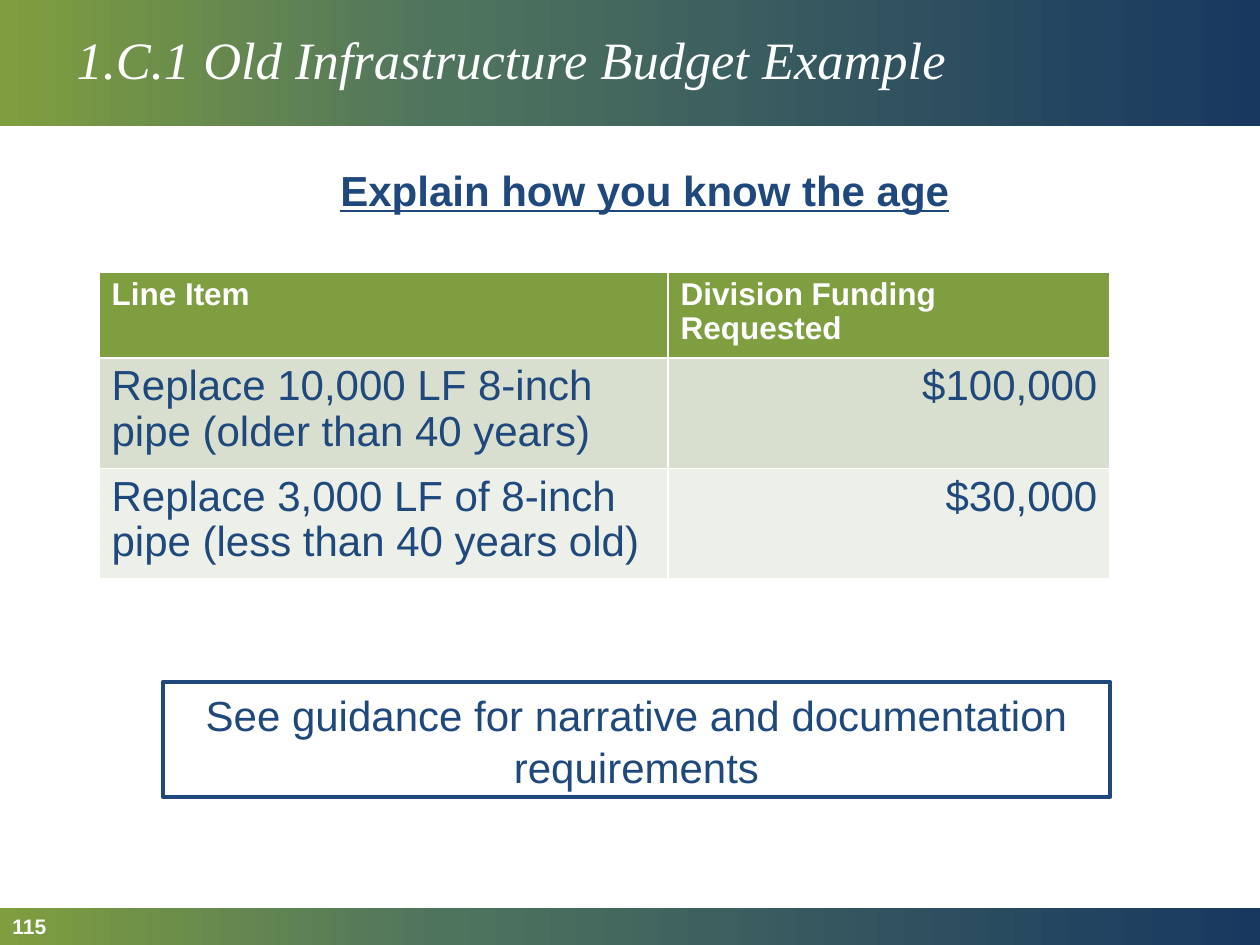
from dataclasses import dataclass

from pptx import Presentation
from pptx.dml.color import RGBColor
from pptx.enum.shapes import MSO_SHAPE as Shape
from pptx.enum.text import MSO_ANCHOR as Anchor, PP_ALIGN as Align
from pptx.oxml import parse_xml
from pptx.oxml.ns import nsdecls
from pptx.util import Emu, Pt

PX = 914400 // 126
SLIDE_SIZE = (1260, 945)


@dataclass(frozen=True)
class Theme:
    """Colours, fonts and type sizes of the slide."""
    navy: str = "1F497D"
    white: str = "FFFFFF"
    green: str = "7F9E3F"
    bands: tuple = ("D8DFCF", "ECF0E8")
    gradient: tuple = ((0, "7F9E3F"), (35, "4F745E"), (100, "183860"))
    title_font: str = "Times New Roman"
    body_font: str = "Arial"
    title_size: int = 30
    body_size: int = 24
    header_size: int = 18
    number_size: int = 12


THEME = Theme()
BODY = {"name": THEME.body_font, "size": THEME.body_size, "color": THEME.navy}
HEADING = {**BODY, "bold": True, "underline": True}
HEADER = {**BODY, "size": THEME.header_size, "color": THEME.white, "bold": True}
NUMBER = {**HEADER, "size": THEME.number_size}
TITLE = {"name": THEME.title_font, "size": THEME.title_size,
         "color": THEME.white, "italic": True}

ROWS = [
    ("Line Item", "Division Funding Requested"),
    ("Replace 10,000 LF 8-inch pipe (older than 40 years)", "$100,000"),
    ("Replace 3,000 LF of 8-inch pipe (less than 40 years old)", "$30,000"),
]


def to_emu(box):
    """Turn px lengths into EMU."""
    return [Emu(length * PX) for length in box]


def write(frame, text, style, **layout):
    """Put one formatted paragraph into a text frame."""
    frame.word_wrap = True
    paragraph = frame.paragraphs[0]
    for name, value in layout.items():
        setattr(paragraph, name, value)
    run = paragraph.add_run()
    run.text = text
    for name, value in style.items():
        if name == "color":
            run.font.color.rgb = RGBColor.from_string(value)
        else:
            setattr(run.font, name, Pt(value) if name == "size" else value)


def add_band(slide, box):
    """Draw a band with the theme gradient running left to right."""
    band = slide.shapes.add_shape(Shape.RECTANGLE, *to_emu(box))
    band.shadow.inherit = False
    band.line.fill.background()
    band.fill.gradient()
    band.fill.gradient_angle = 0
    stops = band.element.spPr.find(".//{*}gsLst")
    for stop in list(stops):
        stops.remove(stop)
    for position, color in THEME.gradient:
        stops.append(parse_xml(
            f'<a:gs {nsdecls("a")} pos="{position * 1000}">'
            f'<a:srgbClr val="{color}"/></a:gs>'))


def add_title(slide, box, text):
    """Place the title over a gradient band."""
    left, top, width, height = box
    add_band(slide, box)
    title = slide.shapes.title
    title.left, title.top, title.width, title.height = to_emu(
        (left + 64, top, width - 113, height))
    slide.shapes._spTree.append(title.element)
    title.text_frame.vertical_anchor = Anchor.MIDDLE
    write(title.text_frame, text, TITLE, alignment=Align.LEFT, line_spacing=0.9)


def add_footer(slide, box, number):
    """Place the slide number over a gradient band."""
    left, top, width, height = box
    add_band(slide, box)
    label = slide.shapes.add_textbox(*to_emu((left, top, 284, height)))
    label.text_frame.vertical_anchor = Anchor.MIDDLE
    write(label.text_frame, number, NUMBER)


def add_heading(slide, box, text):
    """Place the underlined heading."""
    heading = slide.shapes.add_textbox(*to_emu(box))
    write(heading.text_frame, text, HEADING, alignment=Align.CENTER,
          line_spacing=1.05, space_after=Pt(6))


def add_budget_table(slide, box, rows):
    """Place the budget table with a header and banded rows."""
    table = slide.shapes.add_table(len(rows), len(rows[0]), *to_emu(box)).table
    for column, width in zip(table.columns, to_emu((569, 442))):
        column.width = width
    for row, height in zip(table.rows, to_emu((83, 106, 106))):
        row.height = height
    fills = (THEME.green, *THEME.bands)
    for row_index, (texts, fill) in enumerate(zip(rows, fills)):
        for column_index, text in enumerate(texts):
            cell = table.cell(row_index, column_index)
            cell.fill.solid()
            cell.fill.fore_color.rgb = RGBColor.from_string(fill)
            is_amount = row_index > 0 and column_index == 1
            write(cell.text_frame, text, BODY if row_index else HEADER,
                  alignment=Align.RIGHT if is_amount else Align.LEFT,
                  line_spacing=0.97)


def add_note(slide, box, text):
    """Place the outlined note."""
    note = slide.shapes.add_shape(Shape.RECTANGLE, *to_emu(box))
    note.shadow.inherit = False
    note.fill.background()
    note.line.color.rgb = RGBColor.from_string(THEME.navy)
    note.line.width = Pt(2.5)
    write(note.text_frame, text, BODY, alignment=Align.CENTER, line_spacing=1.05)


def main():
    """Build and save the slide."""
    presentation = Presentation()
    presentation.slide_width, presentation.slide_height = to_emu(SLIDE_SIZE)
    slide = presentation.slides.add_slide(presentation.slide_layouts[5])
    add_title(slide, (0, 0, 1260, 126), "1.C.1 Old Infrastructure Budget Example")
    add_footer(slide, (0, 908, 1260, 37), "115")
    add_budget_table(slide, (99, 272, 1011, 295), ROWS)
    add_note(slide, (163, 682, 947, 115),
             "See guidance for narrative and documentation requirements")
    add_heading(slide, (261, 156, 768, 63), "Explain how you know the age")
    presentation.save("out.pptx")


if __name__ == "__main__":
    main()
